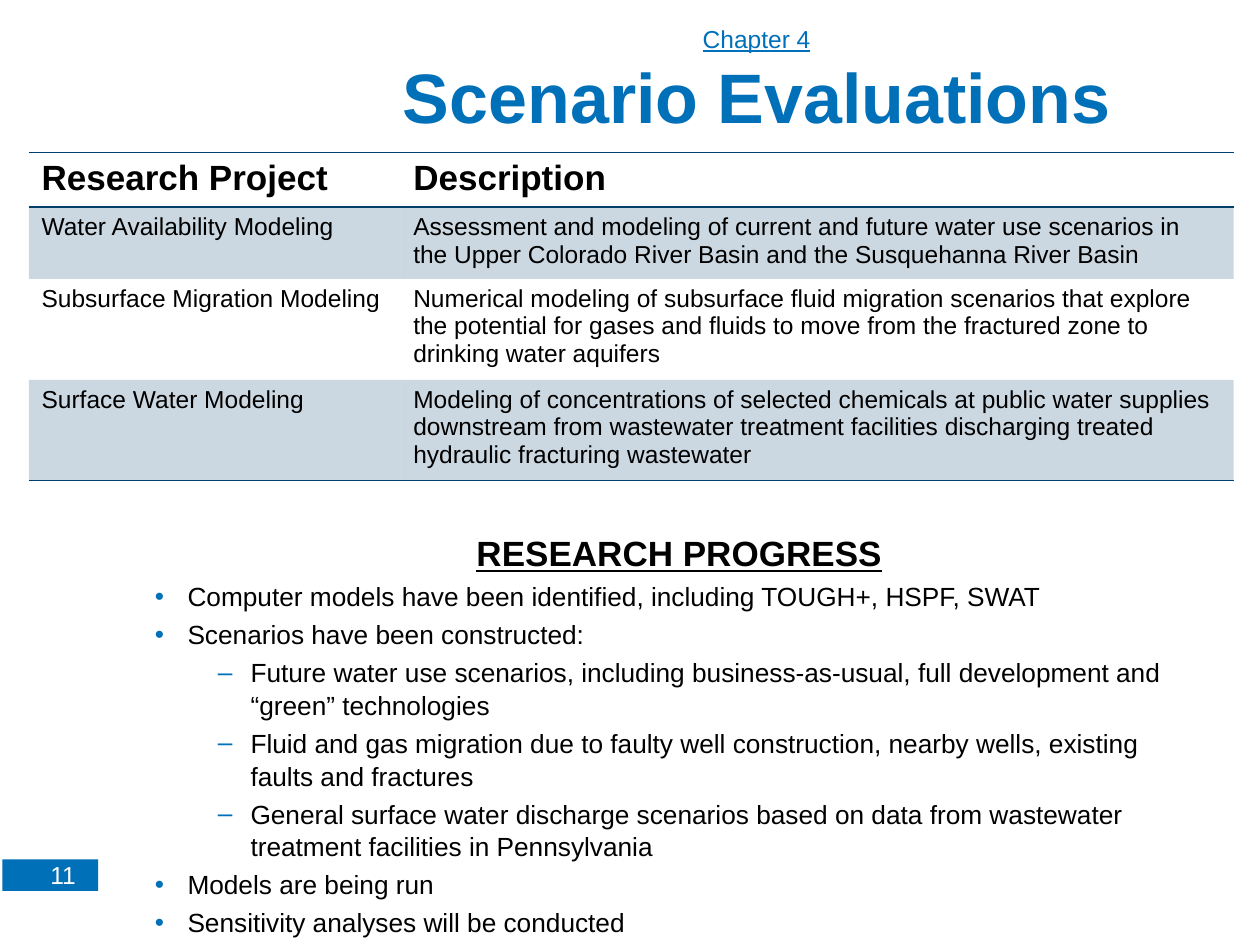
import pptx
import pptx.util
import pptx.dml.color
import pptx.enum.shapes
import pptx.enum.text
import pptx.oxml.ns
import lxml.etree

BLUE = pptx.dml.color.RGBColor(0x00, 0x70, 0xB9)
NAVY = pptx.dml.color.RGBColor(0x00, 0x3F, 0x69)
BLACK = pptx.dml.color.RGBColor(0x00, 0x00, 0x00)
WHITE = pptx.dml.color.RGBColor(0xFF, 0xFF, 0xFF)
ALIGN = pptx.enum.text.PP_ALIGN
ANCHOR = pptx.enum.text.MSO_ANCHOR
qn = pptx.oxml.ns.qn

deck = pptx.Presentation()
deck.slide_width = pptx.util.Inches(10)
deck.slide_height = pptx.util.Inches(7.5)
column = deck.slide_width / 100
row = deck.slide_height / 75
page = deck.slides.add_slide(deck.slide_layouts[5])


def area(left, top, width, height):
    return [round(size) for size in (left * column, top * row, width * column, height * row)]


def add_span(para, words, size, color, bold=False, underline=False):
    span = para.add_run()
    span.text = words
    span.font.name = "Arial"
    span.font.size = pptx.util.Pt(size)
    span.font.color.rgb = color
    span.font.bold = bold
    span.font.underline = underline


badge = page.shapes.add_shape(pptx.enum.shapes.MSO_SHAPE.RECTANGLE, *area(0.2, 68.2, 7.6, 2.5))
badge.shadow.inherit = False
badge.fill.solid()
badge.fill.fore_color.rgb = BLUE
badge.line.fill.background()

number_box = page.shapes.add_textbox(*area(0, 67.8, 7, 2.8))
number_box.text_frame.word_wrap = True
para = number_box.text_frame.paragraphs[0]
para.alignment = ALIGN.RIGHT
add_span(para, "11", 14, WHITE)

title = page.shapes.title
title.left, title.top, title.width, title.height = area(24.7, 1.3, 70.7, 10.1)
frame = title.text_frame
frame.auto_size = pptx.enum.text.MSO_AUTO_SIZE.NONE
frame.vertical_anchor = ANCHOR.BOTTOM
for index, (words, size) in enumerate([("Chapter 4", 14), ("Scenario Evaluations", 40)]):
    para = frame.add_paragraph() if index else frame.paragraphs[0]
    para.alignment = ALIGN.CENTER
    para.space_before = pptx.util.Pt(0)
    add_span(para, words, size, BLUE, bold=index == 1, underline=index == 0)

projects = [
    ("Research Project", "Description"),
    ("Water Availability Modeling",
     "Assessment and modeling of current and future water use scenarios in the Upper Colorado "
     "River Basin and the Susquehanna River Basin"),
    ("Subsurface Migration Modeling",
     "Numerical modeling of subsurface fluid migration scenarios that explore the potential for "
     "gases and fluids to move from the fractured zone to drinking water aquifers"),
    ("Surface Water Modeling",
     "Modeling of concentrations of selected chemicals at public water supplies downstream from "
     "wastewater treatment facilities discharging treated hydraulic fracturing wastewater"),
]
table = page.shapes.add_table(len(projects), 2, *area(2.3, 12.1, 95.6, 26)).table
table.horz_banding = False
for table_column, width in zip(table.columns, (29.5, 66.1)):
    table_column.width = round(width * column)
for table_row, height in zip(table.rows, (4.3, 5.7, 8, 8)):
    table_row.height = round(height * row)

ruled_sides = {0: ("lnT", "lnB"), 1: ("lnT",), 3: ("lnB",)}
for line_number, texts in enumerate(projects):
    header = line_number == 0
    for cell, words in zip(table.rows[line_number].cells, texts):
        add_span(cell.text_frame.paragraphs[0], words, 20 if header else 14, BLACK, bold=header)
        properties = cell._tc.get_or_add_tcPr()
        if line_number % 2:
            cell.fill.solid()
            cell.fill.fore_color.rgb = NAVY
            tint = properties.find(qn("a:solidFill"))[0]
            lxml.etree.SubElement(tint, qn("a:alpha"), val="20000")
        else:
            cell.fill.background()
        for place, side in enumerate(("lnL", "lnR", "lnT", "lnB")):
            border = lxml.etree.Element(qn("a:" + side), w=str(pptx.util.Pt(1)))
            if side in ruled_sides.get(line_number, ()):
                paint = lxml.etree.SubElement(border, qn("a:solidFill"))
                lxml.etree.SubElement(paint, qn("a:srgbClr"), val=str(NAVY))
            else:
                lxml.etree.SubElement(border, qn("a:noFill"))
            properties.insert(place, border)

progress = [
    (0, "Computer models have been identified, including TOUGH+, HSPF, SWAT"),
    (0, "Scenarios have been constructed:"),
    (1, "Future water use scenarios, including business-as-usual, full development and “green” "
        "technologies"),
    (1, "Fluid and gas migration due to faulty well construction, nearby wells, existing faults "
        "and fractures"),
    (1, "General surface water discharge scenarios based on data from wastewater treatment "
        "facilities in Pennsylvania"),
    (0, "Models are being run"),
    (0, "Sensitivity analyses will be conducted"),
]
progress_box = page.shapes.add_textbox(*area(11.3, 41.6, 85.2, 32.6))
frame = progress_box.text_frame
frame.word_wrap = True
heading = frame.paragraphs[0]
heading.alignment = ALIGN.CENTER
heading.line_spacing = 1.04
add_span(heading, "RESEARCH PROGRESS", 20, BLACK, bold=True, underline=True)

hanging = 2.6 * column
for level, words in progress:
    para = frame.add_paragraph()
    para.level = level
    properties = para._p.get_or_add_pPr()
    properties.set("marL", str(round(hanging + level * 5 * column)))
    properties.set("indent", str(round(-hanging)))
    bullet_color = lxml.etree.SubElement(properties, qn("a:buClr"))
    lxml.etree.SubElement(bullet_color, qn("a:srgbClr"), val=str(BLUE))
    lxml.etree.SubElement(properties, qn("a:buFont"), typeface="Arial")
    lxml.etree.SubElement(properties, qn("a:buChar"), char="•–"[level])
    para.line_spacing = 1.04
    para.space_before = pptx.util.Pt(3)
    add_span(para, words, 15, BLACK)

deck.save("out.pptx")
